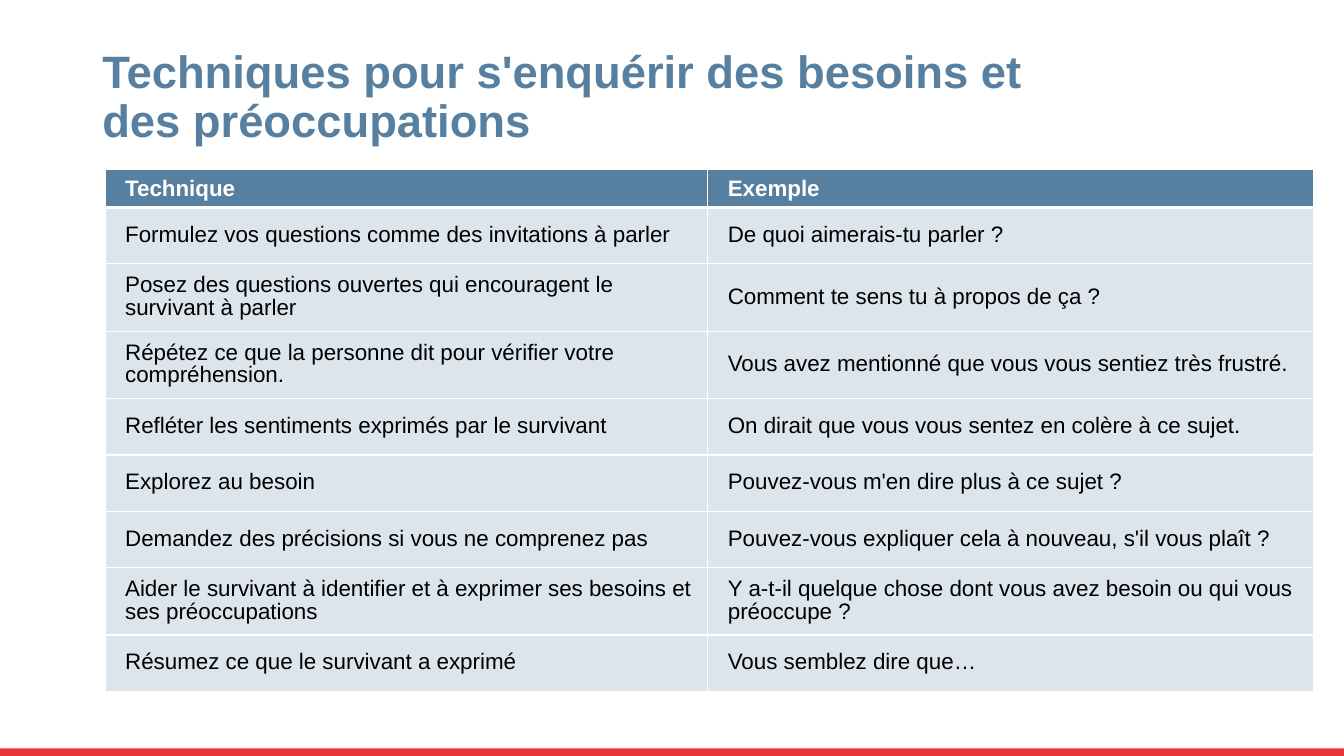
from lxml import etree
from pptx import Presentation
from pptx.dml.color import RGBColor
from pptx.enum.shapes import MSO_SHAPE
from pptx.enum.text import MSO_ANCHOR, PP_ALIGN
from pptx.oxml.ns import qn
from pptx.util import Pt

RECTANGLE = MSO_SHAPE.RECTANGLE
MIDDLE, BOTTOM = MSO_ANCHOR.MIDDLE, MSO_ANCHOR.BOTTOM
LEFT = PP_ALIGN.LEFT

BLUE = RGBColor(0x57, 0x7F, 0x9F)
PALE_BLUE = RGBColor(0xDD, 0xE5, 0xEC)
RED = RGBColor(0xE7, 0x34, 0x39)
WHITE = RGBColor(0xFF, 0xFF, 0xFF)
BLACK = RGBColor(0x00, 0x00, 0x00)

SLIDE_WIDTH, SLIDE_HEIGHT = 960, 540
FOOTER_HEIGHT = 5.5
COLUMN_WIDTHS = (430.5, 432.5)
HEADER_HEIGHT, ONE_LINE, TWO_LINES = 27.2, 40.2, 48.2

HEADINGS = ("Technique", "Exemple")
TECHNIQUES = [
    (ONE_LINE, "Formulez vos questions comme des invitations à parler",
     "De quoi aimerais-tu parler ?"),
    (TWO_LINES, "Posez des questions ouvertes qui encouragent le survivant à parler",
     "Comment te sens tu à propos de ça ?"),
    (TWO_LINES, "Répétez ce que la personne dit pour vérifier votre compréhension.",
     "Vous avez mentionné que vous vous sentiez très frustré."),
    (ONE_LINE, "Refléter les sentiments exprimés par le survivant",
     "On dirait que vous vous sentez en colère à ce sujet."),
    (ONE_LINE, "Explorez au besoin",
     "Pouvez-vous m'en dire plus à ce sujet ?"),
    (ONE_LINE, "Demandez des précisions si vous ne comprenez pas",
     "Pouvez-vous expliquer cela à nouveau, s'il vous plaît ?"),
    (TWO_LINES, "Aider le survivant à identifier et à exprimer ses besoins et ses préoccupations",
     "Y a-t-il quelque chose dont vous avez besoin ou qui vous préoccupe ?"),
    (ONE_LINE, "Résumez ce que le survivant a exprimé",
     "Vous semblez dire que…"),
]


class SlideBuilder:
    font_name = "Arial"
    title_size = 32.4
    table_size = 16
    tight_spacing = 0.9

    def __init__(self, slide):
        self.slide = slide

    def set_text(self, text_frame, text, size, color, bold, line_spacing):
        text_frame.text = text
        paragraph = text_frame.paragraphs[0]
        paragraph.alignment = LEFT
        paragraph.line_spacing = line_spacing
        font = paragraph.runs[0].font
        font.name, font.size, font.bold = self.font_name, Pt(size), bold
        font.color.rgb = color

    def add_bar(self, left, top, width, height, color):
        bar = self.slide.shapes.add_shape(
            RECTANGLE, Pt(left), Pt(top), Pt(width), Pt(height))
        bar.shadow.inherit = False
        bar.fill.solid()
        bar.fill.fore_color.rgb = color
        bar.line.fill.background()

    def add_title(self, text, left, top, width, height):
        title = self.slide.shapes.add_textbox(Pt(left), Pt(top), Pt(width), Pt(height))
        text_frame = title.text_frame
        text_frame.word_wrap = True
        text_frame.vertical_anchor = BOTTOM
        self.set_text(text_frame, text, self.title_size, BLUE, True, self.tight_spacing)

    def add_border(self, cell, side, width):
        line = etree.SubElement(
            cell._tc.get_or_add_tcPr(), qn(f"a:ln{side}"), w=str(Pt(width)))
        fill = etree.SubElement(line, qn("a:solidFill"))
        etree.SubElement(fill, qn("a:srgbClr"), val=str(WHITE))

    def fill_cell(self, cell, text, is_header, is_below_header):
        cell.margin_left, cell.margin_right = Pt(14.4), Pt(7.2)
        cell.margin_top = cell.margin_bottom = Pt(3.6)
        cell.vertical_anchor = MIDDLE
        widths = {"L": 1, "R": 1, "T": 3 if is_below_header else 1, "B": 3 if is_header else 1}
        for side, width in widths.items():
            self.add_border(cell, side, width)
        cell.fill.solid()
        cell.fill.fore_color.rgb = BLUE if is_header else PALE_BLUE
        self.set_text(cell.text_frame, text, self.table_size,
                      WHITE if is_header else BLACK, is_header,
                      1.0 if is_header else self.tight_spacing)

    def add_table(self, rows, left, top, column_widths):
        """Each row is its height followed by its cell texts; the first is the header."""
        height = sum(row[0] for row in rows)
        table = self.slide.shapes.add_table(
            len(rows), len(column_widths), Pt(left), Pt(top),
            Pt(sum(column_widths)), Pt(height)).table
        for column, width in zip(table.columns, column_widths):
            column.width = Pt(width)
        for row_index, (row_height, *texts) in enumerate(rows):
            table.rows[row_index].height = Pt(row_height)
            for column_index, text in enumerate(texts):
                self.fill_cell(table.cell(row_index, column_index), text,
                               row_index == 0, row_index == 1)


def main():
    presentation = Presentation()
    presentation.slide_width = Pt(SLIDE_WIDTH)
    presentation.slide_height = Pt(SLIDE_HEIGHT)
    builder = SlideBuilder(presentation.slides.add_slide(presentation.slide_layouts[6]))

    builder.add_bar(0, SLIDE_HEIGHT - FOOTER_HEIGHT, SLIDE_WIDTH, FOOTER_HEIGHT, RED)
    builder.add_title("Techniques pour s'enquérir des besoins et des préoccupations",
                      66, 46, 705.5, 62.5)
    builder.add_table([(HEADER_HEIGHT, *HEADINGS), *TECHNIQUES], 75, 121, COLUMN_WIDTHS)

    presentation.save("out.pptx")


if __name__ == "__main__":
    main()
